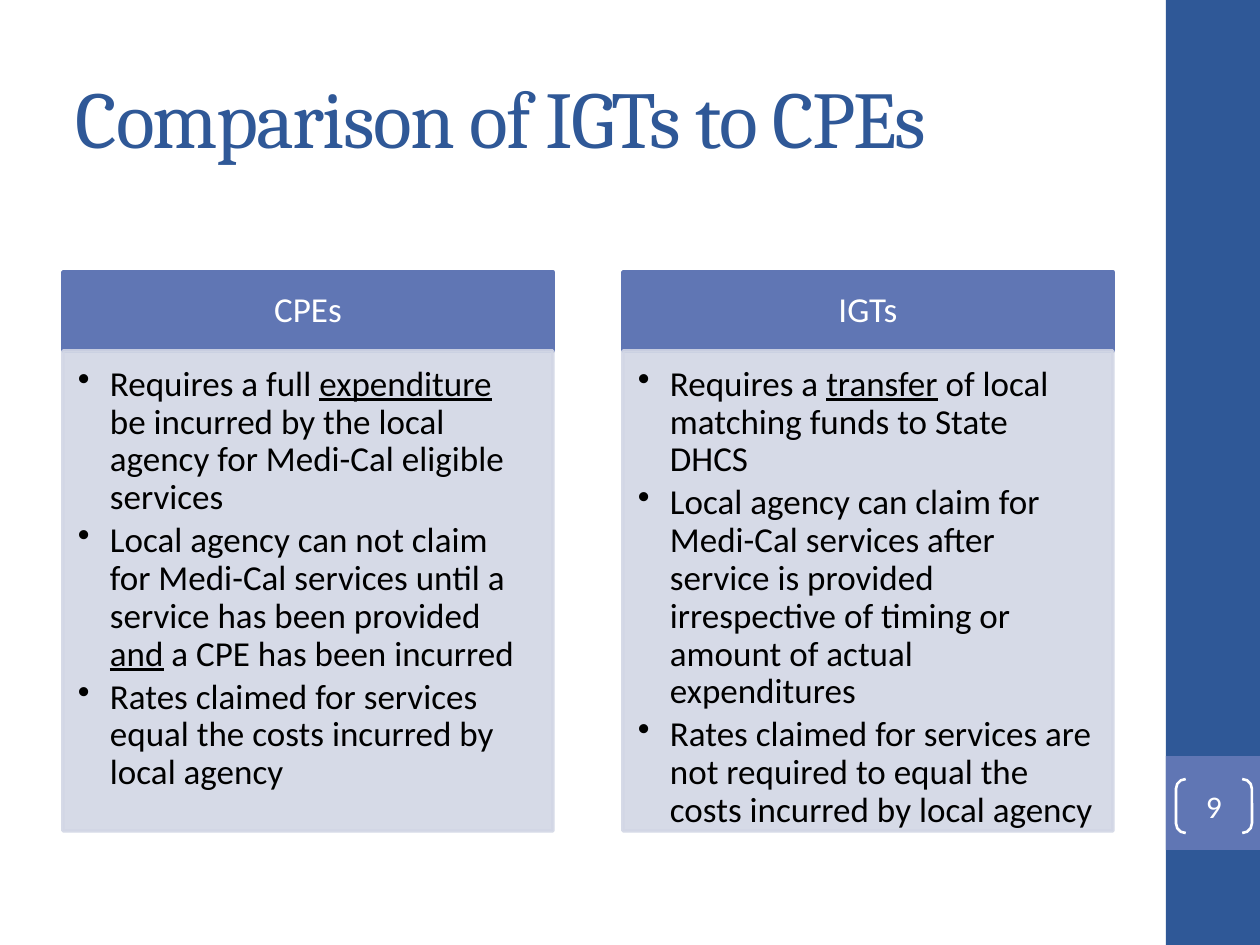
from dataclasses import dataclass

from lxml.etree import SubElement as Sub
from pptx import Presentation
from pptx.dml.color import RGBColor as RGB
from pptx.enum.shapes import MSO_SHAPE as Form
from pptx.enum.text import MSO_ANCHOR as Anchor, PP_ALIGN as Align
from pptx.oxml.ns import qn
from pptx.util import Emu, Pt

NAVY, BLUE, PALE = "2F5897", "6076B4", "D2D6E5"
WHITE, BLACK = "FFFFFF", "000000"


@dataclass
class Box:
    x: int
    y: int
    w: int
    h: int


@dataclass
class Run:
    text: str
    under: bool = False


@dataclass
class Panel:
    head: str
    items: list[list[Run]]


PANELS = [
    Panel("CPEs", [
        [Run("Requires a full "), Run("expenditure", True),
         Run(" be incurred by the local agency for Medi-Cal eligible services")],
        [Run("Local agency can not claim for Medi-Cal services until a "
             "service has been provided "),
         Run("and", True), Run(" a CPE has been incurred")],
        [Run("Rates claimed for services equal the costs incurred by local agency")],
    ]),
    Panel("IGTs", [
        [Run("Requires a "), Run("transfer", True),
         Run(" of local matching funds to State DHCS")],
        [Run("Local agency can claim for Medi-Cal services after service is "
             "provided irrespective of timing or amount of actual expenditures")],
        [Run("Rates claimed for services are not required to equal the costs "
             "incurred by local agency")],
    ]),
]


def px(n: int) -> Emu:
    return Emu(round(n * 914400 / 126))


def color(code: str) -> RGB:
    return RGB.from_string(code)


def place(box: Box) -> list[Emu]:
    return [px(n) for n in (box.x, box.y, box.w, box.h)]


def draw(slide, box: Box, fill=None, line=None, width=2.0, form=Form.RECTANGLE):
    shape = slide.shapes.add_shape(form, *place(box))
    shape.shadow.inherit = False
    if fill:
        shape.fill.solid()
        shape.fill.fore_color.rgb = color(fill)
    else:
        shape.fill.background()
    if line:
        shape.line.color.rgb = color(line)
        shape.line.width = Pt(width)
    else:
        shape.line.fill.background()
    return shape


def fade(shape, share: int) -> None:
    for tone in shape.element.spPr.iter(qn("a:srgbClr")):
        Sub(tone, qn("a:alpha"), val=str(share * 1000))


def setup(shape, pads: tuple[int, ...], anchor=Anchor.MIDDLE):
    frame = shape.text_frame
    frame.word_wrap = True
    frame.vertical_anchor = anchor
    (frame.margin_left, frame.margin_top,
     frame.margin_right, frame.margin_bottom) = [px(n) for n in pads]
    return frame


def write(para, runs: list[Run], size: int, ink: str, face="Calibri",
          align=Align.CENTER) -> None:
    para.alignment = align
    for item in runs:
        run = para.add_run()
        run.text = item.text
        run.font.size = Pt(size)
        run.font.name = face
        run.font.color.rgb = color(ink)
        if item.under:
            run.font.underline = True


def bullet(para) -> None:
    props = para._p.get_or_add_pPr()
    props.set("marL", str(px(32)))
    props.set("indent", str(-px(32)))
    Sub(props, qn("a:buChar"), char="•")


def panel(slide, data: Panel, x: int) -> None:
    head = draw(slide, Box(x, 272, 490, 79), BLUE, BLUE)
    para = setup(head, (20, 11, 20, 11)).paragraphs[0]
    para.line_spacing = 0.9
    write(para, [Run(data.head)], 20, WHITE)

    body = draw(slide, Box(x, 351, 490, 480), PALE, PALE)
    fade(body, 90)
    frame = setup(body, (15, 15, 20, 21), Anchor.TOP)
    for i, runs in enumerate(data.items):
        para = frame.add_paragraph() if i else frame.paragraphs[0]
        para.level = 1
        para.line_spacing = 0.9
        para.space_after = Pt(3)
        bullet(para)
        write(para, runs, 20, BLACK, align=Align.LEFT)


def title(slide, text: str) -> None:
    shape = slide.shapes.add_textbox(*place(Box(63, 38, 1050, 157)))
    para = setup(shape, (13, 6, 13, 6)).paragraphs[0]
    write(para, [Run(text)], 46, NAVY, "Cambria", Align.LEFT)
    para.runs[0].font._element.set("spc", "-100")


def number(slide, text: str) -> None:
    shape = draw(slide, Box(1176, 779, 76, 54), None, WHITE, 1.5,
                 Form.DOUBLE_BRACKET)
    shape.adjustments[0] = 0.18
    para = setup(shape, (0, 0, 0, 0)).paragraphs[0]
    write(para, [Run(text)], 18, WHITE)


def main() -> None:
    deck = Presentation()
    deck.slide_width, deck.slide_height = px(1260), px(945)
    slide = deck.slides.add_slide(deck.slide_layouts[6])
    draw(slide, Box(1166, 0, 94, 945), NAVY)
    draw(slide, Box(1166, 756, 94, 94), BLUE)
    title(slide, "Comparison of IGTs to CPEs")
    for i, data in enumerate(PANELS):
        panel(slide, data, 63 + i * 560)
    number(slide, "9")
    deck.save("out.pptx")


if __name__ == "__main__":
    main()
